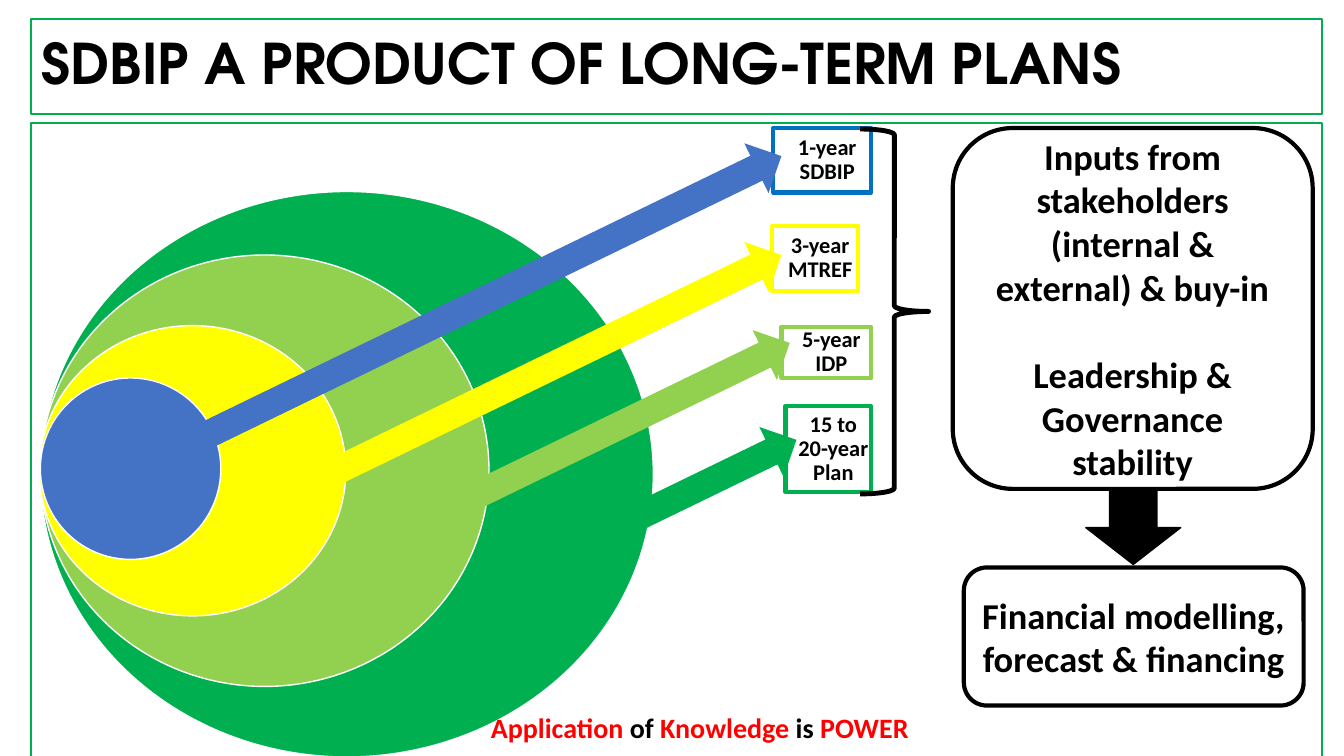
from lxml import etree
from pptx import Presentation
from pptx.dml.color import RGBColor
from pptx.enum.shapes import MSO_CONNECTOR, MSO_SHAPE as Preset
from pptx.enum.text import MSO_ANCHOR, MSO_AUTO_SIZE, PP_ALIGN
from pptx.oxml.ns import qn
from pptx.util import Inches, Pt

BLUE, YELLOW, LIME, GREEN = "4472C4", "FFFF00", "92D050", "00B050"
BLACK, WHITE, RED = "000000", "FFFFFF", "FF0000"
ARROW_HEIGHT = 0.55
ARROW_ANGLE = 334.1

# Plans from longest to shortest: colour and circle bounds
CIRCLES = [
    (GREEN, (0.4, 1.9, 6.08, 5.61)),
    (LIME, (0.4, 2.53, 4.45, 4.28)),
    (YELLOW, (0.39, 3.23, 3.04, 2.88)),
    (BLUE, (0.4, 3.75, 1.79, 1.8)),
]

# Label, label colour, label bounds, plan colour, leader ends, arrow left/top/width
PLANS = [
    ("1-year SDBIP", "0070C0", (7.67, 1.27, 0.97, 0.64),
     BLUE, (7.38, 1.73, 1.87, 4.48), (1.33, 2.75, 6.76)),
    ("3-year MTREF", YELLOW, (7.66, 2.24, 0.85, 0.65),
     YELLOW, (7.5, 2.57, 2.94, 4.87), (2.85, 3.38, 5.16)),
    ("5-year IDP", LIME, (7.75, 3.24, 0.89, 0.51),
     LIME, (7.48, 3.52, 4.27, 5.13), (4.3, 3.94, 3.72)),
    ("15 to 20-year Plan", GREEN, (7.79, 4.03, 0.85, 0.85),
     GREEN, (7.7, 4.42, 5.53, 5.57), (5.24, 4.7, 2.8)),
]


def rgb(colour):
    return RGBColor.from_string(colour)


def inches(values):
    return [Inches(value) for value in values]


def set_line(line, colour, width):
    line.color.rgb = rgb(colour)
    line.width = Pt(width)


def format_run(run, size, colour=BLACK, font="Calibri"):
    run.font.size = Pt(size)
    run.font.name = font
    run.font.bold = True
    run.font.color.rgb = rgb(colour)


def add_preset(slide, preset, bounds, fill=None, line=None, width=1):
    shape = slide.shapes.add_shape(preset, *inches(bounds))
    shape.shadow.inherit = False
    if fill:
        shape.fill.solid()
        shape.fill.fore_color.rgb = rgb(fill)
    else:
        shape.fill.background()
    if line:
        set_line(shape.line, line, width)
    else:
        shape.line.fill.background()
    return shape


def write_centred(shape, text, size):
    frame = shape.text_frame
    frame.word_wrap = True
    frame.vertical_anchor = MSO_ANCHOR.MIDDLE
    frame.text = text
    for paragraph in frame.paragraphs:
        paragraph.alignment = PP_ALIGN.CENTER
        for run in paragraph.runs:
            format_run(run, size)
    return frame


def add_title(slide, text):
    title = slide.shapes.title
    title.left, title.top, title.width, title.height = inches((0.31, 0.19, 12.8, 0.94))
    set_line(title.line, GREEN, 1.25)
    frame = title.text_frame
    frame.text = text
    frame.auto_size = MSO_AUTO_SIZE.NONE
    frame.vertical_anchor = MSO_ANCHOR.MIDDLE
    heading = frame.paragraphs[0]
    heading.alignment = PP_ALIGN.LEFT
    heading.line_spacing = 0.9
    format_run(heading.runs[0], 40, font="TeX Gyre Adventor")


def add_plan_label(slide, text, colour, bounds):
    label = add_preset(slide, Preset.RECTANGLE, bounds, line=colour, width=3)
    frame = write_centred(label, text, 16)
    frame.margin_left = Inches(0.12)
    frame.margin_right = frame.margin_top = frame.margin_bottom = Inches(0.02)
    frame.paragraphs[0].line_spacing = 0.9


def add_leader(slide, colour, ends):
    leader = slide.shapes.add_connector(MSO_CONNECTOR.STRAIGHT, *inches(ends))
    set_line(leader.line, colour, 4)
    etree.SubElement(leader._element.spPr, qn("a:effectLst"))


def add_plan_arrow(slide, colour, place):
    arrow = add_preset(slide, Preset.RIGHT_ARROW, (*place, ARROW_HEIGHT), fill=colour)
    arrow.rotation = ARROW_ANGLE


def add_rounded_box(slide, bounds, text):
    box = add_preset(slide, Preset.ROUNDED_RECTANGLE, bounds, line=BLACK, width=3)
    return write_centred(box, text, 26)


def add_motto(slide):
    frame = slide.shapes.add_textbox(*inches((4.69, 7.02, 4.5, 0.4))).text_frame
    frame.word_wrap = True
    frame.vertical_anchor = MSO_ANCHOR.MIDDLE
    motto = frame.paragraphs[0]
    motto.alignment = PP_ALIGN.CENTER
    for text, colour in [("Application", RED), (" of ", BLACK), ("Knowledge", RED),
                         (" is ", BLACK), ("POWER", RED)]:
        run = motto.add_run()
        run.text = text
        format_run(run, 20, colour)


def main():
    deck = Presentation()
    deck.slide_width, deck.slide_height = inches((13.33, 7.5))
    slide = deck.slides.add_slide(deck.slide_layouts[5])
    add_title(slide, "SDBIP A PRODUCT OF LONG-TERM PLANS")

    for colour, bounds in CIRCLES:
        add_preset(slide, Preset.OVAL, bounds, fill=colour, line=WHITE)
    for label, label_colour, bounds, colour, ends, _ in PLANS:
        add_plan_label(slide, label, label_colour, bounds)
        add_leader(slide, colour, ends)
    for *_, colour, _, place in PLANS:
        add_plan_arrow(slide, colour, place)

    add_preset(slide, Preset.RIGHT_BRACE, (8.53, 1.28, 0.68, 3.62), line=BLACK, width=3.5)
    add_rounded_box(slide, (9.56, 5.63, 3.37, 1.37),
                    "Financial modelling, forecast & financing")
    inputs = add_rounded_box(slide, (9.45, 1.27, 3.57, 3.58),
                             "Inputs from stakeholders (internal & external) & buy-in\n"
                             "Leadership & Governance stability")
    inputs.paragraphs[1].space_before = Pt(31)
    add_preset(slide, Preset.DOWN_ARROW, (10.77, 4.87, 0.94, 0.73), fill=BLACK, line=BLACK)

    add_motto(slide)
    add_preset(slide, Preset.RECTANGLE, (0.31, 1.22, 12.8, 6.3), line=GREEN, width=1.25)
    deck.save("out.pptx")


if __name__ == "__main__":
    main()
